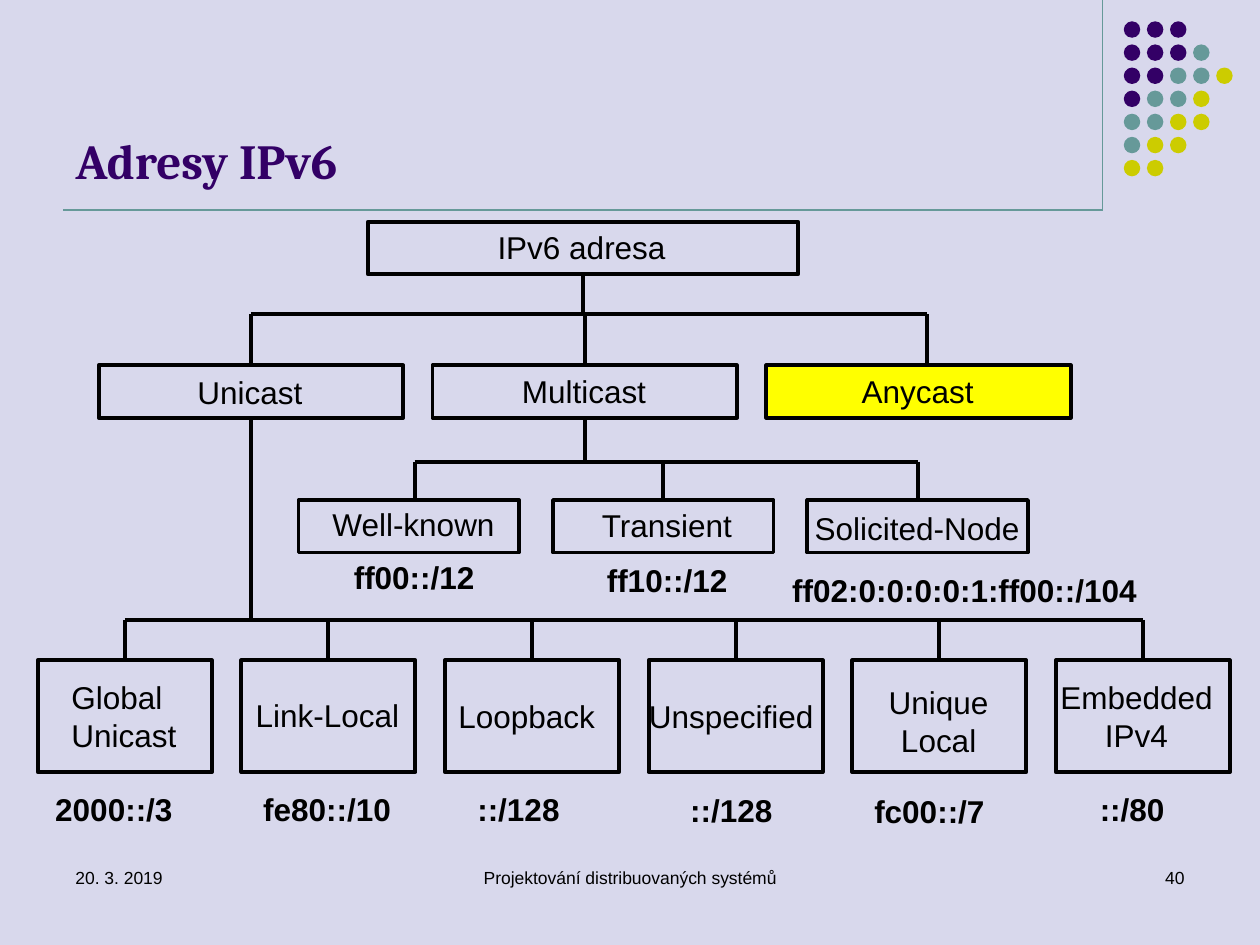
from dataclasses import dataclass

from lxml.etree import SubElement
from pptx import Presentation
from pptx.dml.color import RGBColor
from pptx.enum.shapes import MSO_CONNECTOR as Line, MSO_SHAPE as Shape
from pptx.enum.text import MSO_ANCHOR as Anchor, MSO_AUTO_SIZE as AutoSize, PP_ALIGN as Align
from pptx.oxml.ns import qn
from pptx.util import Pt

BLACK = RGBColor(0x00, 0x00, 0x00)
LAVENDER = RGBColor(0xD8, 0xD8, 0xEC)
PURPLE = RGBColor(0x33, 0x00, 0x66)
TEAL = RGBColor(0x66, 0x99, 0x99)
OLIVE = RGBColor(0xCC, 0xCC, 0x00)
YELLOW = RGBColor(0xFF, 0xFF, 0x00)

DOT_COLORS = {"P": PURPLE, "T": TEAL, "Y": OLIVE}
DOT_ROWS = ["PPP", "PPPT", "PPTTY", "PTTY", "TTYY", "TYY", "YY"]


@dataclass
class Node:
    """An address type; label and prefix are placed as (dx, dy, width) within its box."""
    name: str
    label: tuple
    prefix: str = ""
    prefix_at: tuple = ()
    align: Align = Align.LEFT
    fill: RGBColor = None
    drop_shift: float = 0


ROOT = Node("IPv6 adresa", (67, 0, 111.6))
TYPES = [
    Node("Unicast", (49.4, 0.7, 74.9)),
    Node("Multicast", (44, 0, 86.4)),
    Node("Anycast", (47.4, 0, 79.2), fill=YELLOW, drop_shift=5),
]
MULTICASTS = [
    Node("Well-known", (12.3, -0.7, 108), "ff00::/12", (24.5, 29.5, 84.2), drop_shift=3.3),
    Node("Transient", (20.9, 0, 89.3), "ff10::/12", (23.7, 31, 84.2)),
    Node("Solicited-Node", (-2.9, 1.4, 132.5), "ff02:0:0:0:0:1:ff00::/104", (-15.8, 36.7, 213.1)),
]
UNICASTS = [
    Node("Global\nUnicast", (12.2, 6.5, 74.9), "2000::/3", (2.9, 70.6, 82.1)),
    Node("Link-Local", (1, 16.6, 97.2), "fe80::/10", (5.3, 70.6, 88.6)),
    Node("Loopback", (0.6, 17.3, 93.6), "::/128", (11.4, 70.6, 61.9)),
    Node("Unspecified", (-7, 17.3, 109.4), "::/128", (16.7, 71.3, 61.9)),
    Node("Unique\nLocal", (13.4, 9.4, 72), "fc00::/7", (5.5, 72, 78.5), Align.CENTER),
    Node("Embedded\nIPv4", (-5, 6.5, 102.2), "::/80", (18, 70.6, 51.8), Align.CENTER),
]


def write(frame, text, size=18, font="Arial", color=BLACK, bold=False, align=Align.LEFT, wrap=False):
    """Write one formatted paragraph into a text frame."""
    frame.word_wrap = wrap
    frame.auto_size = AutoSize.NONE
    paragraph = frame.paragraphs[0]
    paragraph.text = text
    paragraph.alignment = align
    for run in paragraph.runs:
        run.font.size = Pt(size)
        run.font.name = font
        run.font.bold = bold
        run.font.color.rgb = color


def add_text(slide, left, top, width, height, text, **style):
    """Add a text box with formatted text."""
    text_box = slide.shapes.add_textbox(Pt(left), Pt(top), Pt(width), Pt(height))
    write(text_box.text_frame, text, **style)


def add_line(slide, x1, y1, x2, y2, color=BLACK, weight=2.25):
    """Add a straight line without shadow."""
    line = slide.shapes.add_connector(Line.STRAIGHT, Pt(x1), Pt(y1), Pt(x2), Pt(y2))
    line.line.color.rgb = color
    line.line.width = Pt(weight)
    SubElement(line._element.spPr, qn("a:effectLst"))
    return line


def add_dots(slide, left, top, pitch=13.2, size=9.4):
    """Draw the corner ornament of coloured dots."""
    for row, colors in enumerate(DOT_ROWS):
        for column, key in enumerate(colors):
            dot = slide.shapes.add_shape(Shape.OVAL, Pt(left + column * pitch),
                                         Pt(top + row * pitch), Pt(size), Pt(size))
            dot.shadow.inherit = False
            dot.fill.solid()
            dot.fill.fore_color.rgb = DOT_COLORS[key]
            dot.line.fill.background()


def add_header(slide, left, top, width, height):
    """Place the title, its two rules and the dots."""
    right, bottom = left + width, top + height
    add_line(slide, right, top, right, bottom, TEAL, 0.75)
    add_line(slide, left, bottom, right, bottom, TEAL, 0.75)
    add_dots(slide, right + 12.2, top + 12.2)
    title = slide.shapes.title
    title.left, title.top, title.width, title.height = Pt(left), Pt(top + 9), Pt(width), Pt(102.6)
    write(title.text_frame, "Adresy IPv6", size=28, font="Cambria", color=PURPLE, bold=True, wrap=True)
    title.text_frame.vertical_anchor = Anchor.BOTTOM


def add_footer(slide, left, top, width, height):
    """Place the date, the course name and the page number."""
    side, middle = 168, 228
    parts = [
        (left, side, "20. 3. 2019", Align.LEFT),
        (left + (width - middle) / 2, middle, "Projektování distribuovaných systémů", Align.CENTER),
        (left + width - side, side, "40", Align.RIGHT),
    ]
    for x, part_width, text, align in parts:
        add_text(slide, x, top, part_width, height, text, size=10, align=align, wrap=True)


def add_node(slide, node, left, top, width, height):
    """Draw one box with its label and address prefix."""
    box = slide.shapes.add_shape(Shape.RECTANGLE, Pt(left), Pt(top), Pt(width), Pt(height))
    box.shadow.inherit = False
    box.line.color.rgb = BLACK
    box.line.width = Pt(2.25)
    if node.fill:
        box.fill.solid()
        box.fill.fore_color.rgb = node.fill
    else:
        box.fill.background()
    dx, dy, label_width = node.label
    label_height = 51 if "\n" in node.name else 29
    add_text(slide, left + dx, top + dy, label_width, label_height, node.name, align=node.align)
    if node.prefix:
        dx, dy, prefix_width = node.prefix_at
        add_text(slide, left + dx, top + dy, prefix_width, 29, node.prefix, bold=True)
    return box


def add_level(slide, nodes, left, top, width, height, pitch, parent, bar_y):
    """Draw a row of nodes and the lines that join it to its parent."""
    boxes, drops = [], []
    for index, node in enumerate(nodes):
        x = left + index * pitch
        box = add_node(slide, node, x, top, width, height)
        drop_x = x + width / 2 + node.drop_shift
        drop = add_line(slide, drop_x, bar_y, drop_x, top)
        if not node.drop_shift:
            drop.end_connect(box, 0)
        boxes.append(box)
        drops.append(drop_x)
    add_line(slide, drops[0], bar_y, drops[-1], bar_y)
    trunk_x = (parent.left + parent.width / 2) / Pt(1)
    trunk = add_line(slide, trunk_x, (parent.top + parent.height) / Pt(1), trunk_x, bar_y)
    trunk.begin_connect(parent, 2)
    return boxes


def add_tree(slide, left, top):
    """Draw the hierarchy of IPv6 addresses."""
    root = add_node(slide, ROOT, left + 188.6, top, 246, 30)
    unicast, multicast, _ = add_level(slide, TYPES, left + 34.8, top + 82, 174, 30, 190.75, root, top + 52.8)
    add_level(slide, MULTICASTS, left + 149, top + 159, 126, 30, 145.4, multicast, top + 137)
    add_level(slide, UNICASTS, left, top + 250.5, 99.4, 64, 116.35, unicast, top + 227.4)


def main():
    """Build and save the slide."""
    deck = Presentation()
    deck.slide_width, deck.slide_height = Pt(720), Pt(540)
    slide = deck.slides.add_slide(deck.slide_layouts[5])
    slide.background.fill.solid()
    slide.background.fill.fore_color.rgb = LAVENDER
    add_header(slide, 36, 0, 594, 120)
    add_tree(slide, 21.6, 126.8)
    add_footer(slide, 36, 492, 648, 36)
    deck.save("out.pptx")


if __name__ == "__main__":
    main()
